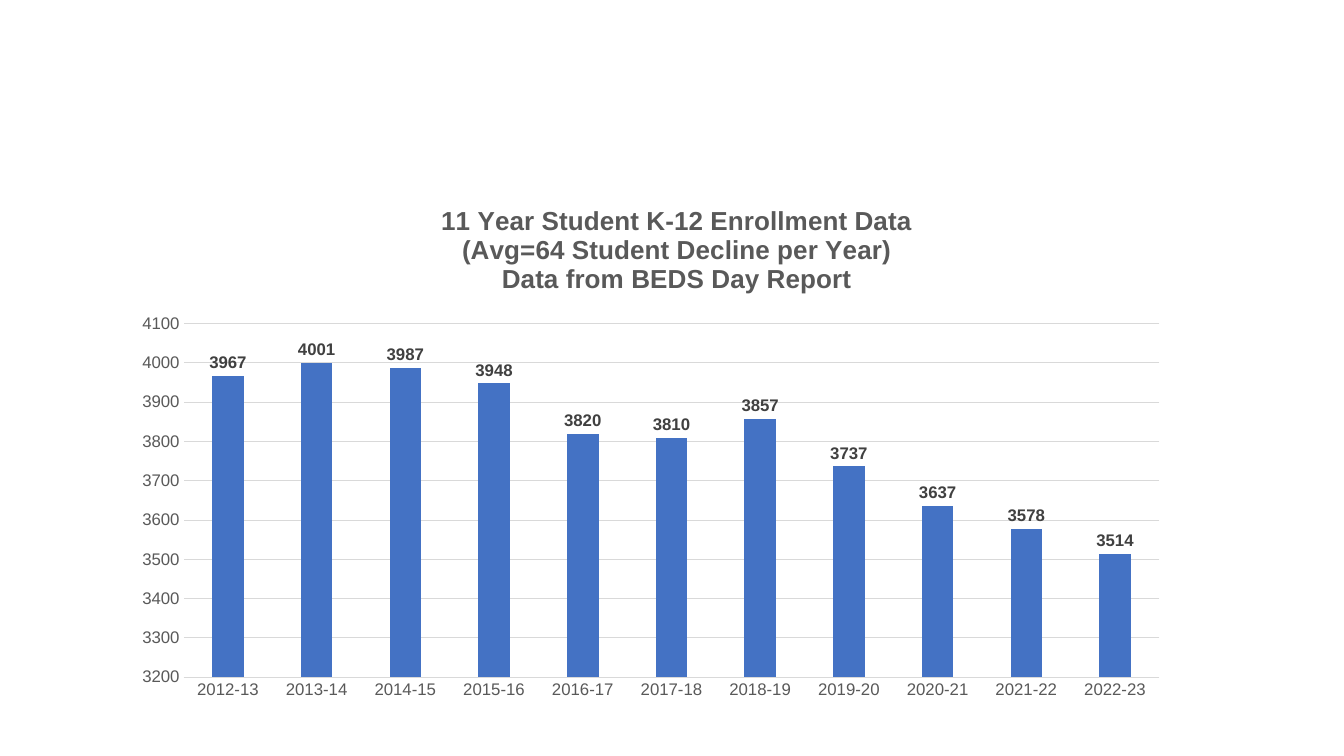
from lxml import etree
from pptx import Presentation
from pptx.chart.data import CategoryChartData
from pptx.dml.color import RGBColor
from pptx.enum.chart import XL_CHART_TYPE, XL_LABEL_POSITION, XL_TICK_MARK
from pptx.enum.text import PP_ALIGN
from pptx.oxml import parse_xml
from pptx.oxml.ns import nsdecls, qn
from pptx.util import Inches, Pt

COLUMNS = XL_CHART_TYPE.COLUMN_CLUSTERED
OUTSIDE_END = XL_LABEL_POSITION.OUTSIDE_END
NO_TICK = XL_TICK_MARK.NONE
CENTER = PP_ALIGN.CENTER
FONT = "Arial"
COLORS = {"bar": "4472C4", "text": "595959", "label": "404040",
          "grid": "D9D9D9", "base": "000000"}
TITLE = ["11 Year Student K-12 Enrollment Data",
         "(Avg=64 Student Decline per Year)",
         "Data from BEDS Day Report"]
FIRST_YEAR = 2012
ENROLLMENT = [3967, 4001, 3987, 3948, 3820, 3810, 3857, 3737, 3637, 3578, 3514]


def style_font(font, size, color, bold=False):
    """Set face, size, weight and colour of a font."""
    font.name = FONT
    font.size = Pt(size)
    font.bold = bold
    font.color.rgb = RGBColor.from_string(COLORS[color])


def style_line(line, color):
    """Give a line the thin chart weight and a colour."""
    line.width = Pt(0.75)
    line.color.rgb = RGBColor.from_string(COLORS[color])


def set_layout(parent, after, **place):
    """Place a chart part by fractions of the chart area."""
    for old in parent.findall(qn("c:layout")):
        parent.remove(old)
    layout = parse_xml(f"<c:layout {nsdecls('c')}><c:manualLayout/></c:layout>")
    manual = layout[0]
    if "w" in place:
        etree.SubElement(manual, qn("c:layoutTarget")).set("val", "inner")
    for axis in ("x", "y"):
        etree.SubElement(manual, qn(f"c:{axis}Mode")).set("val", "edge")
    for key, value in place.items():
        etree.SubElement(manual, qn(f"c:{key}")).set("val", str(value))
    previous = parent.find(qn(after)) if after else None
    parent.insert(0 if previous is None else parent.index(previous) + 1, layout)


def add_title(chart):
    """Write the three-line chart title."""
    tf = chart.chart_title.text_frame
    for i, line in enumerate(TITLE):
        p = tf.paragraphs[0] if i == 0 else tf.add_paragraph()
        p.text = line
        p.alignment = CENTER
        style_font(p.runs[0].font, 18.6, "text", bold=True)
    chart.chart_title.include_in_layout = False
    set_layout(chart.chart_title._element, "c:tx", x=0.3, y=0.02)


def style_axes(chart):
    """Format the year axis and the enrollment axis."""
    years, counts = chart.category_axis, chart.value_axis
    for axis in (years, counts):
        axis.major_tick_mark = NO_TICK
        axis.minor_tick_mark = NO_TICK
        style_font(axis.tick_labels.font, 12, "text")
    style_line(years.format.line, "grid")
    counts.format.line.fill.background()
    counts.minimum_scale, counts.maximum_scale = 3200, 4100
    counts.major_unit = 100
    counts.has_major_gridlines = True
    style_line(counts.major_gridlines.format.line, "grid")


def style_bars(plot):
    """Format the columns and their value labels."""
    plot.gap_width = 182
    plot.vary_by_categories = False
    fill = plot.series[0].format.fill
    fill.solid()
    fill.fore_color.rgb = RGBColor.from_string(COLORS["bar"])
    labels = plot.series[0].data_labels
    labels.show_value = True
    labels.position = OUTSIDE_END
    style_font(labels.font, 12, "label", bold=True)


def add_enrollment_chart(slide):
    """Add the column chart of enrollment by school year."""
    data = CategoryChartData(number_format="General")
    data.categories = [f"{year}-{(year + 1) % 100}" for year in
                       range(FIRST_YEAR, FIRST_YEAR + len(ENROLLMENT))]
    data.add_series("Series 1", ENROLLMENT)
    chart = slide.shapes.add_chart(COLUMNS, Inches(1.19), Inches(1.89),
                                   Inches(10.52), Inches(5.16), data).chart
    style_font(chart.font, 10, "base")
    chart.has_legend = False
    add_title(chart)
    style_axes(chart)
    style_bars(chart.plots[0])
    plot_area = chart._chartSpace.chart.plotArea
    set_layout(plot_area, None, x=0.06, y=0.256, w=0.92, h=0.68)


def main():
    """Build and save the slide."""
    prs = Presentation()
    prs.slide_width, prs.slide_height = Inches(13.33), Inches(7.5)
    slide = prs.slides.add_slide(prs.slide_layouts[6])
    add_enrollment_chart(slide)
    prs.save("out.pptx")


if __name__ == "__main__":
    main()
